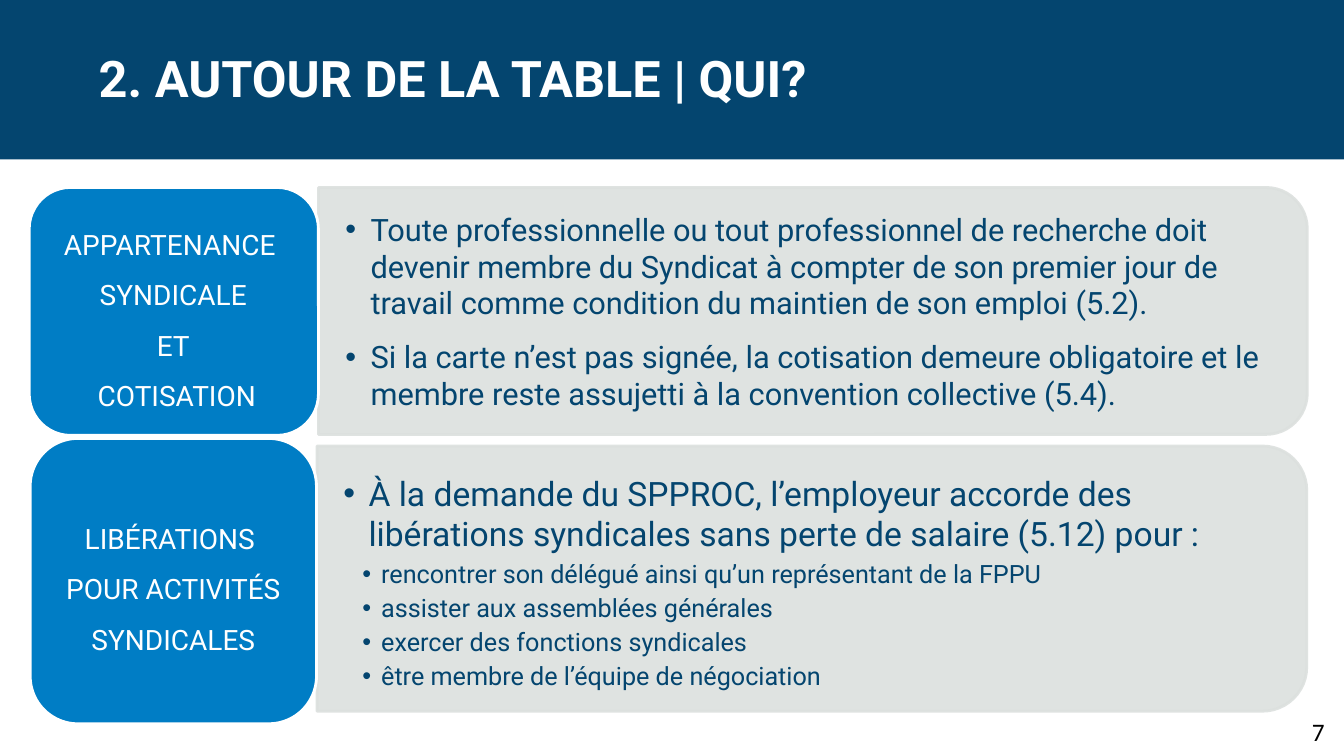
from dataclasses import dataclass

import pptx
import pptx.dml.color
import pptx.enum.shapes
import pptx.enum.text
import pptx.oxml.xmlchemy
import pptx.shapes.autoshape
import pptx.slide
import pptx.text.text
import pptx.util

Pt = pptx.util.Pt
Align = pptx.enum.text.PP_ALIGN
Anchor = pptx.enum.text.MSO_ANCHOR
Preset = pptx.enum.shapes.MSO_SHAPE


@dataclass(frozen=True)
class Theme:
    navy: str = "04456F"
    blue: str = "007DC5"
    grey: str = "DCE0DE"
    white: str = "FFFFFF"
    black: str = "000000"
    font: str = "Roboto"
    number_font: str = "Calibri"
    title_size: float = 36
    label_size: float = 20
    detail_size: float = 18
    panel_opacity: int = 90
    outline: float = 2


@dataclass(frozen=True)
class Box:
    left: float
    top: float
    width: float
    height: float

    def lengths(self) -> tuple:
        return Pt(self.left), Pt(self.top), Pt(self.width), Pt(self.height)


@dataclass(frozen=True)
class TextStyle:
    size: float
    color: str
    font: str = "Roboto"
    bold: bool = False
    align: Align = Align.LEFT
    line_spacing: float = 1.0
    space_after: float = 0
    level: int = 0
    indent: float = 0
    hanging: float = 0


@dataclass(frozen=True)
class Line:
    text: str
    style: TextStyle


@dataclass(frozen=True)
class Topic:
    label_box: Box
    label_text_box: Box
    label: list[Line]
    panel_box: Box
    panel_text_box: Box
    points: list[Line]
    anchor: Anchor


THEME = Theme()
PANEL_INSETS = (19.2, 9.9)
LABEL_INSETS = (6, 3)
DEFAULT_INSETS = (7.2, 3.6)


def bullet_style(size: float, space_after: float, level: int = 1) -> TextStyle:
    indent, hanging = (18, 18) if level == 1 else (27, 13.5)
    return TextStyle(size, THEME.navy, THEME.font, space_after=space_after,
                     level=level, indent=indent, hanging=hanging)


def label_style(space_after: float = 0) -> TextStyle:
    return TextStyle(THEME.label_size, THEME.white, THEME.font,
                     align=Align.CENTER, line_spacing=1.5, space_after=space_after)


DETAIL = bullet_style(THEME.detail_size, 2.7, level=2)

TOPICS = [
    Topic(
        Box(20.9, 133.9, 206.6, 177.1),
        Box(29.5, 142.6, 188.6, 159.8),
        [Line(text, label_style())
         for text in ("APPARTENANCE ", "SYNDICALE", "ET", " COTISATION")],
        Box(227.5, 133.9, 706.3, 176.4),
        Box(227.5, 142.6, 697.7, 159.1),
        [
            Line("Toute professionnelle ou tout professionnel de recherche doit devenir "
                 "membre du Syndicat à compter de son premier jour de travail comme "
                 "condition du maintien de son emploi (5.2).", bullet_style(22, 12)),
            Line("Si la carte n’est pas signée, la cotisation demeure obligatoire et le "
                 "membre reste assujetti à la convention collective (5.4).",
                 bullet_style(22, 3.3)),
        ],
        Anchor.MIDDLE,
    ),
    Topic(
        Box(21.6, 313.2, 204.5, 203.8),
        Box(31.7, 322.6, 184.3, 183.6),
        [Line("LIBÉRATIONS \vPOUR ACTIVITÉS SYNDICALES", label_style(7))],
        Box(226.4, 318.6, 707, 189.4),
        Box(226.1, 327.6, 698.4, 171.4),
        [
            Line("À la demande du SPPROC, l’employeur accorde des libérations "
                 "syndicales sans perte de salaire (5.12) pour :", bullet_style(24, 3.6)),
            Line("rencontrer son délégué ainsi qu’un représentant de la FPPU", DETAIL),
            Line("assister aux assemblées générales", DETAIL),
            Line("exercer des fonctions syndicales", DETAIL),
            Line("être membre de l’équipe de négociation", DETAIL),
        ],
        Anchor.TOP,
    ),
]


def rgb(color: str) -> pptx.dml.color.RGBColor:
    return pptx.dml.color.RGBColor.from_string(color)


def append_element(parent: pptx.oxml.xmlchemy.BaseOxmlElement, tag: str,
                   **attributes: str) -> None:
    element = pptx.oxml.xmlchemy.OxmlElement(tag)
    for name, value in attributes.items():
        element.set(name, value)
    parent.append(element)


def add_bullet(paragraph: pptx.text.text._Paragraph, style: TextStyle) -> None:
    properties = paragraph._p.get_or_add_pPr()
    properties.set("marL", str(Pt(style.indent)))
    properties.set("indent", str(-Pt(style.hanging)))
    append_element(properties, "a:buFont", typeface="Arial")
    append_element(properties, "a:buChar", char="•")


def add_text(slide: pptx.slide.Slide, box: Box, lines: list[Line],
             insets: tuple[float, float] = DEFAULT_INSETS,
             anchor: Anchor = Anchor.MIDDLE) -> None:
    frame = slide.shapes.add_textbox(*box.lengths()).text_frame
    frame.word_wrap = True
    frame.vertical_anchor = anchor
    frame.margin_left = frame.margin_right = Pt(insets[0])
    frame.margin_top = frame.margin_bottom = Pt(insets[1])
    for index, line in enumerate(lines):
        paragraph = frame.add_paragraph() if index else frame.paragraphs[0]
        style = line.style
        paragraph.text = line.text
        paragraph.level = style.level
        paragraph.alignment = style.align
        paragraph.line_spacing = style.line_spacing
        paragraph.space_after = Pt(style.space_after)
        if style.hanging:
            add_bullet(paragraph, style)
        for run in paragraph.runs:
            run.font.name = style.font
            run.font.size = Pt(style.size)
            run.font.bold = style.bold
            run.font.color.rgb = rgb(style.color)


def add_block(slide: pptx.slide.Slide, preset: Preset, box: Box, fill: str,
              outline: str = "") -> pptx.shapes.autoshape.Shape:
    shape = slide.shapes.add_shape(preset, *box.lengths())
    shape.shadow.inherit = False
    shape.fill.solid()
    shape.fill.fore_color.rgb = rgb(fill)
    if outline:
        shape.line.color.rgb = rgb(outline)
        shape.line.width = Pt(THEME.outline)
    else:
        shape.line.fill.background()
    return shape


def add_panel(slide: pptx.slide.Slide, box: Box) -> None:
    offset = (box.width - box.height) / 2
    upright = Box(box.left + offset, box.top - offset, box.height, box.width)
    shape = add_block(slide, Preset.ROUND_2_SAME_RECTANGLE, upright, THEME.grey, THEME.grey)
    shape.rotation = 90
    for color in shape._element.spPr.xpath(".//a:srgbClr"):
        append_element(color, "a:alpha", val=str(THEME.panel_opacity * 1000))


def add_topic(slide: pptx.slide.Slide, topic: Topic) -> None:
    add_panel(slide, topic.panel_box)
    add_text(slide, topic.panel_text_box, topic.points, PANEL_INSETS, topic.anchor)
    add_block(slide, Preset.ROUNDED_RECTANGLE, topic.label_box, THEME.blue, THEME.white)
    add_text(slide, topic.label_text_box, topic.label, LABEL_INSETS)


def main() -> None:
    presentation = pptx.Presentation()
    presentation.slide_width, presentation.slide_height = Pt(960), Pt(540)
    slide = presentation.slides.add_slide(presentation.slide_layouts[6])
    add_block(slide, Preset.RECTANGLE, Box(0, 0, 960, 113.8), THEME.navy)
    number_style = TextStyle(THEME.detail_size, THEME.black, THEME.number_font,
                             align=Align.RIGHT)
    add_text(slide, Box(729.4, 508.3, 223.9, 28.8), [Line("7", number_style)],
             anchor=Anchor.TOP)
    title_style = TextStyle(THEME.title_size, THEME.white, THEME.font, bold=True)
    add_text(slide, Box(63.4, 10.1, 764.6, 90),
             [Line("2. AUTOUR DE LA TABLE | QUI?", title_style)])
    for topic in TOPICS:
        add_topic(slide, topic)
    presentation.save("out.pptx")


if __name__ == "__main__":
    main()
